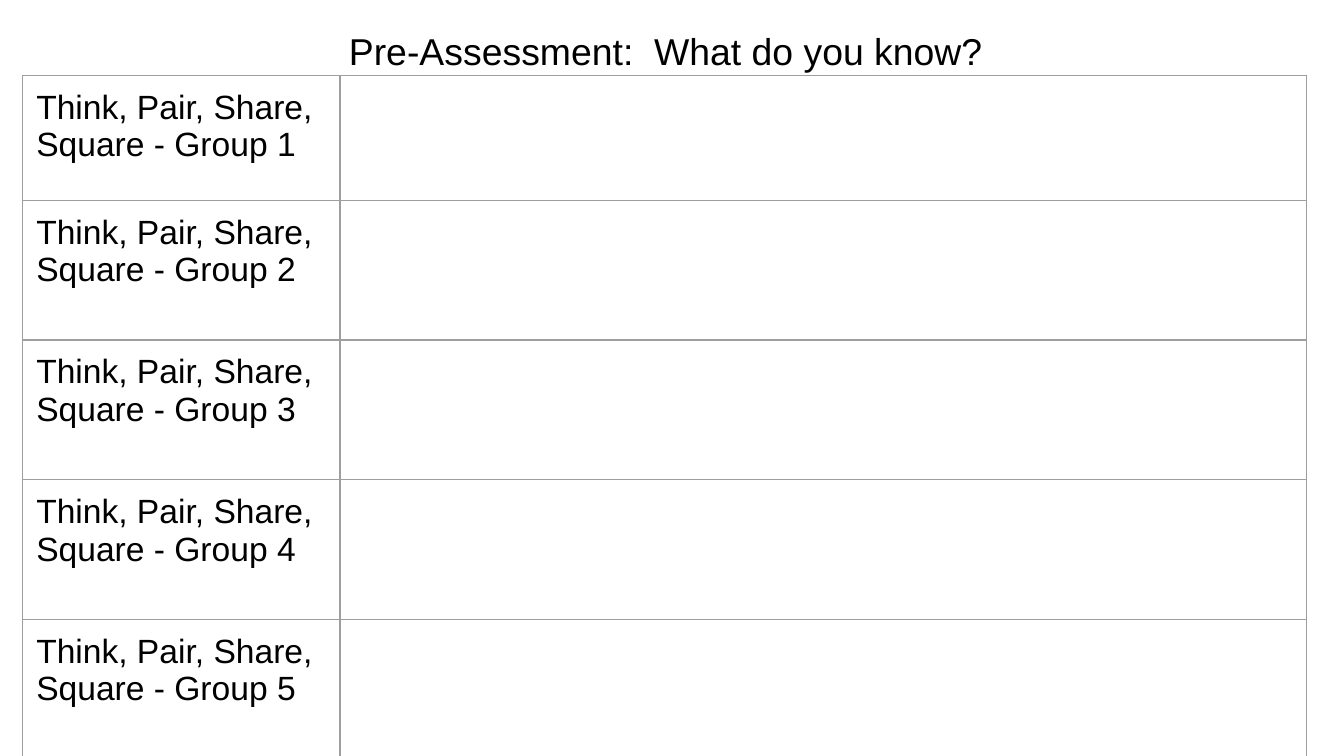
"""Build a pre-assessment slide with one answer row per group."""
from pptx import Presentation
from pptx.dml.color import RGBColor
from pptx.enum.text import MSO_ANCHOR, PP_ALIGN
from pptx.oxml import parse_xml
from pptx.oxml.ns import nsdecls
from pptx.util import Inches, Pt

TITLE = "Pre-Assessment:  What do you know?"
LABELS = [f"Think, Pair, Share, Square - Group {n}" for n in range(1, 6)]
THEME = {
    "font": "Arial", "ink": "000000", "rule": "9E9E9E",
    "title": 20, "body": 18, "line": 0.75, "pad": 0.1,
}
COLS = [2.36, 7.19]
ROWS = [0.93] + [1.04] * (len(LABELS) - 1)


def write(frame, text, size, align):
    para = frame.paragraphs[0]
    para.alignment = align
    run = para.add_run()
    run.text = text
    run.font.name = THEME["font"]
    run.font.size = Pt(size)
    run.font.color.rgb = RGBColor.from_string(THEME["ink"])


def pad(box):
    for side in ("left", "right", "top", "bottom"):
        setattr(box, f"margin_{side}", Inches(THEME["pad"]))


def rule(cell):
    props = cell._tc.get_or_add_tcPr()
    for spot, side in enumerate(("lnL", "lnR", "lnT", "lnB")):
        props.insert(spot, parse_xml(
            f'<a:{side} {nsdecls("a")} w="{Pt(THEME["line"])}"><a:solidFill>'
            f'<a:srgbClr val="{THEME["rule"]}"/></a:solidFill></a:{side}>'))


def add_title(slide):
    title = slide.shapes.title
    title.left, title.top = Inches(0.45), Inches(0.11)
    title.width, title.height = Inches(9.01), Inches(0.56)
    frame = title.text_frame
    frame.word_wrap = True
    frame.vertical_anchor = MSO_ANCHOR.TOP
    pad(frame)
    write(frame, TITLE, THEME["title"], PP_ALIGN.CENTER)


def add_grid(slide):
    table = slide.shapes.add_table(
        len(ROWS), len(COLS), Inches(0.17), Inches(0.56),
        Inches(sum(COLS)), Inches(sum(ROWS))).table
    table.first_row = table.horz_banding = False
    for col, width in zip(table.columns, COLS):
        col.width = Inches(width)
    for row, height, label in zip(table.rows, ROWS, LABELS):
        row.height = Inches(height)
        for cell in row.cells:
            cell.fill.background()
            pad(cell)
            rule(cell)
        write(row.cells[0].text_frame, label, THEME["body"], PP_ALIGN.LEFT)


def main():
    deck = Presentation()
    deck.slide_width = Inches(10)
    deck.slide_height = deck.slide_width * 9 // 16
    slide = deck.slides.add_slide(deck.slide_layouts[5])
    add_title(slide)
    add_grid(slide)
    deck.save("out.pptx")


if __name__ == "__main__":
    main()
